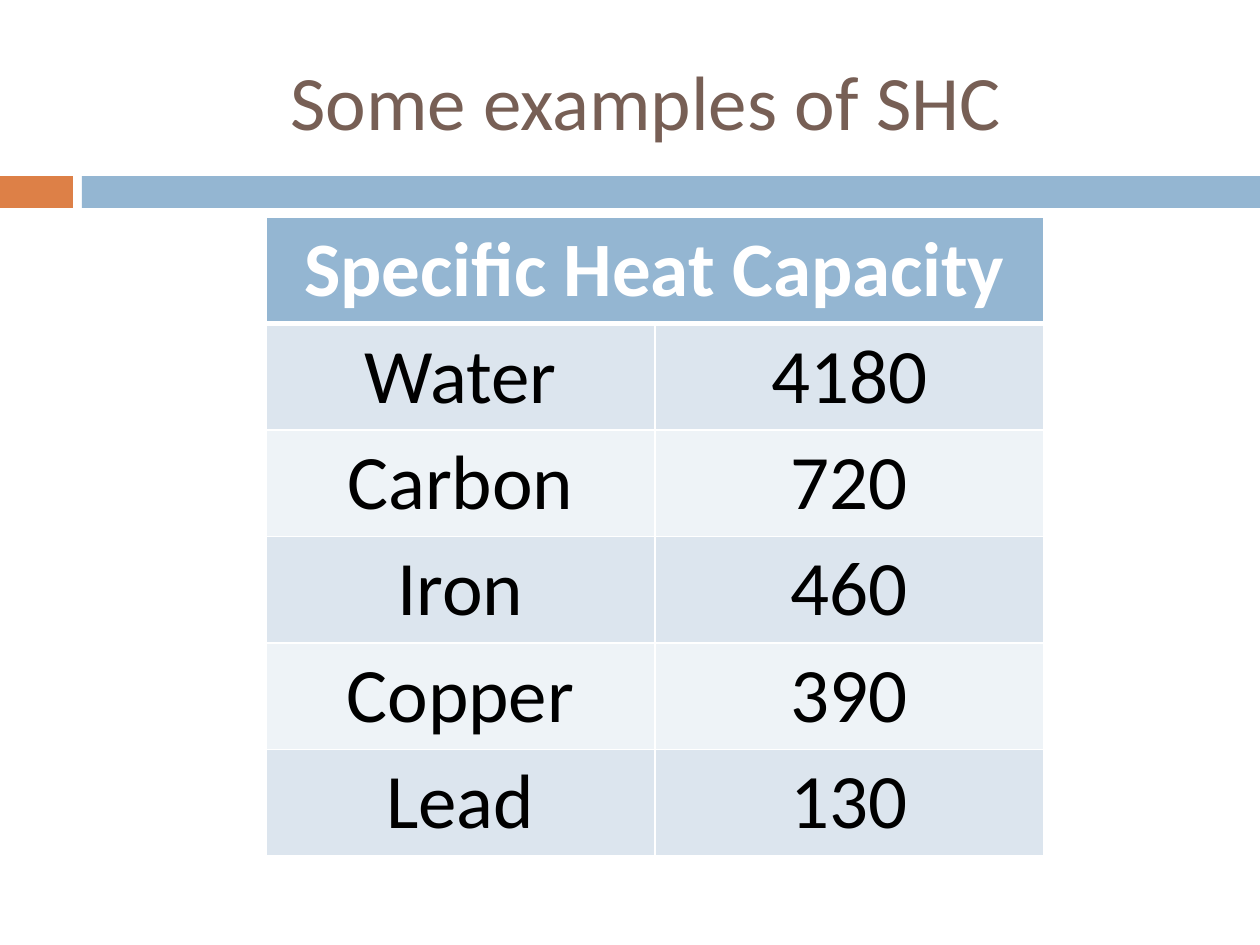
from lxml.etree import SubElement
from pptx import Presentation
from pptx.dml.color import RGBColor
from pptx.enum.shapes import MSO_SHAPE
from pptx.enum.text import MSO_ANCHOR, PP_ALIGN
from pptx.oxml.ns import qn
from pptx.util import Pt

PX = 914400 // 126
FONT = "Calibri"
SIZE = 44
WHITE = RGBColor(0xFF, 0xFF, 0xFF)
BLACK = RGBColor(0x00, 0x00, 0x00)
BROWN = RGBColor(0x77, 0x5F, 0x55)
ORANGE = RGBColor(0xDD, 0x80, 0x47)
BLUE = RGBColor(0x94, 0xB6, 0xD2)
BAND_DARK = RGBColor(0xDC, 0xE5, 0xEE)
BAND_LIGHT = RGBColor(0xEE, 0xF3, 0xF7)

HEADING = "Specific Heat Capacity"
CAPACITIES = [
    ("Water", 4180),
    ("Carbon", 720),
    ("Iron", 460),
    ("Copper", 390),
    ("Lead", 130),
]


class SlideBuilder:
    def __init__(self, slide):
        self.slide = slide

    def box(self, x, y, w, h):
        return [v * PX for v in (x, y, w, h)]

    def label(self, tf, text, color, bold=False):
        tf.text = text
        p = tf.paragraphs[0]
        p.alignment = PP_ALIGN.CENTER
        font = p.runs[0].font
        font.name = FONT
        font.size = Pt(SIZE)
        font.bold = bold
        font.color.rgb = color

    def bar(self, x, y, w, h, color):
        sp = self.slide.shapes.add_shape(MSO_SHAPE.RECTANGLE, *self.box(x, y, w, h))
        sp.shadow.inherit = False
        sp.fill.solid()
        sp.fill.fore_color.rgb = color
        sp.line.fill.background()

    def title(self, x, y, w, h, text):
        tf = self.slide.shapes.add_textbox(*self.box(x, y, w, h)).text_frame
        tf.word_wrap = True
        tf.vertical_anchor = MSO_ANCHOR.MIDDLE
        self.label(tf, text, BROWN)

    def borders(self, cell, top, bottom):
        tcPr = cell._tc.get_or_add_tcPr()
        for side, width in (("L", 1), ("R", 1), ("T", top), ("B", bottom)):
            ln = SubElement(tcPr, qn(f"a:ln{side}"), w=str(Pt(width)))
            fill = SubElement(ln, qn("a:solidFill"))
            SubElement(fill, qn("a:srgbClr"), val=str(WHITE))

    def cell(self, cell, text, fill, color, bold=False, top=1, bottom=1):
        self.label(cell.text_frame, text, color, bold)
        self.borders(cell, top, bottom)
        cell.fill.solid()
        cell.fill.fore_color.rgb = fill

    def table(self, x, y, w, h, heading, rows):
        frame = self.slide.shapes.add_table(len(rows) + 1, 2, *self.box(x, y, w, h))
        table = frame.table
        table.cell(0, 0).merge(table.cell(0, 1))
        self.cell(table.cell(0, 0), heading, BLUE, WHITE, bold=True, bottom=3)
        for i, row in enumerate(rows, 1):
            fill = BAND_DARK if i % 2 else BAND_LIGHT
            for j, value in enumerate(row):
                self.cell(table.cell(i, j), str(value), fill, BLACK, top=3 if i == 1 else 1)


def main():
    prs = Presentation()
    prs.slide_width = 1260 * PX
    prs.slide_height = 945 * PX
    s = SlideBuilder(prs.slides.add_slide(prs.slide_layouts[6]))
    s.bar(0, 176, 73, 32, ORANGE)
    s.bar(82, 176, 1178, 32, BLUE)
    s.title(84, 32, 1124, 136, "Some examples of SHC")
    s.table(266, 217, 778, 639, HEADING, CAPACITIES)
    prs.save("out.pptx")


if __name__ == "__main__":
    main()
